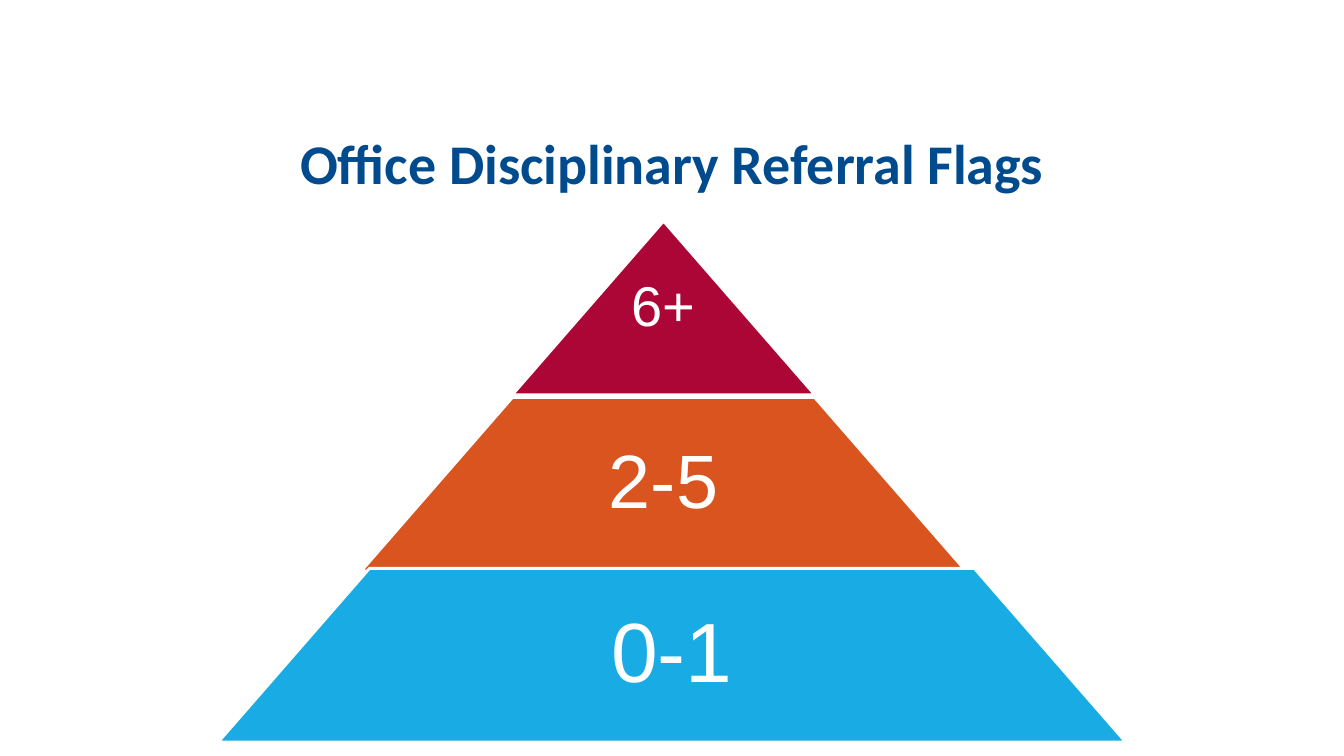
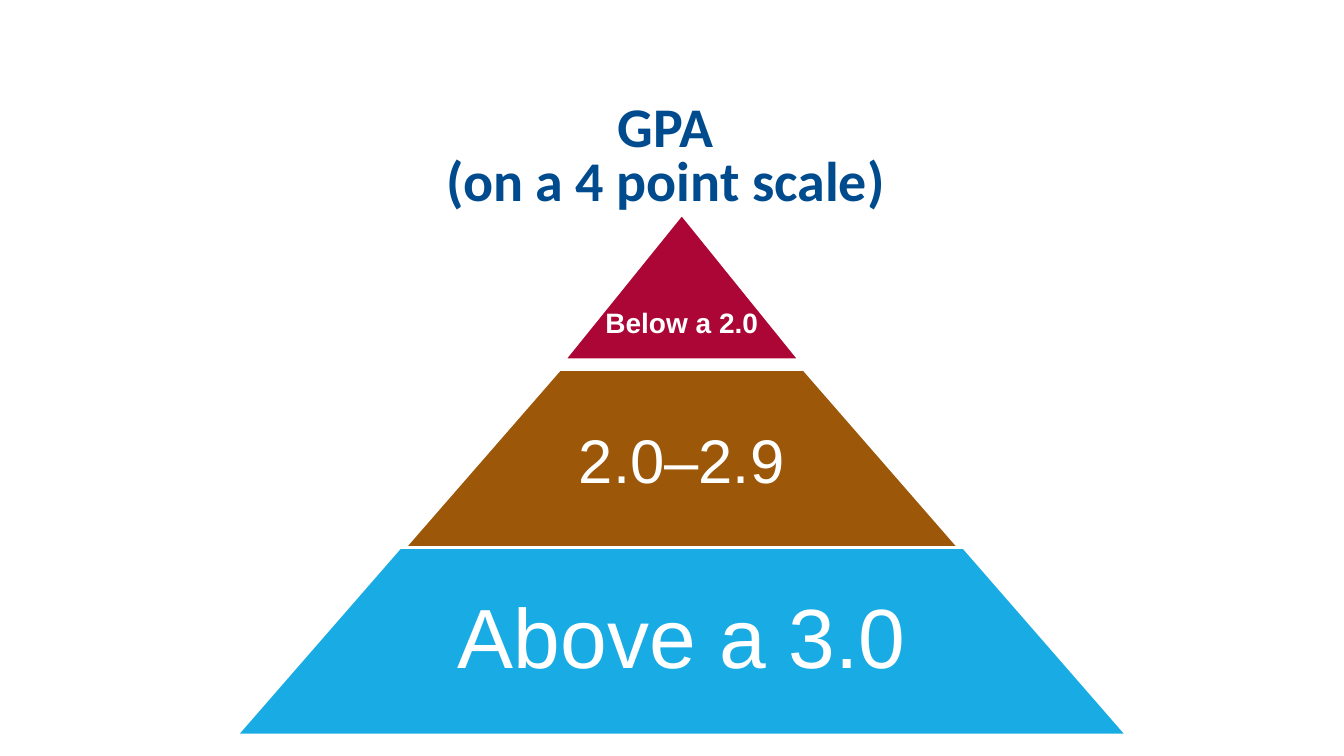
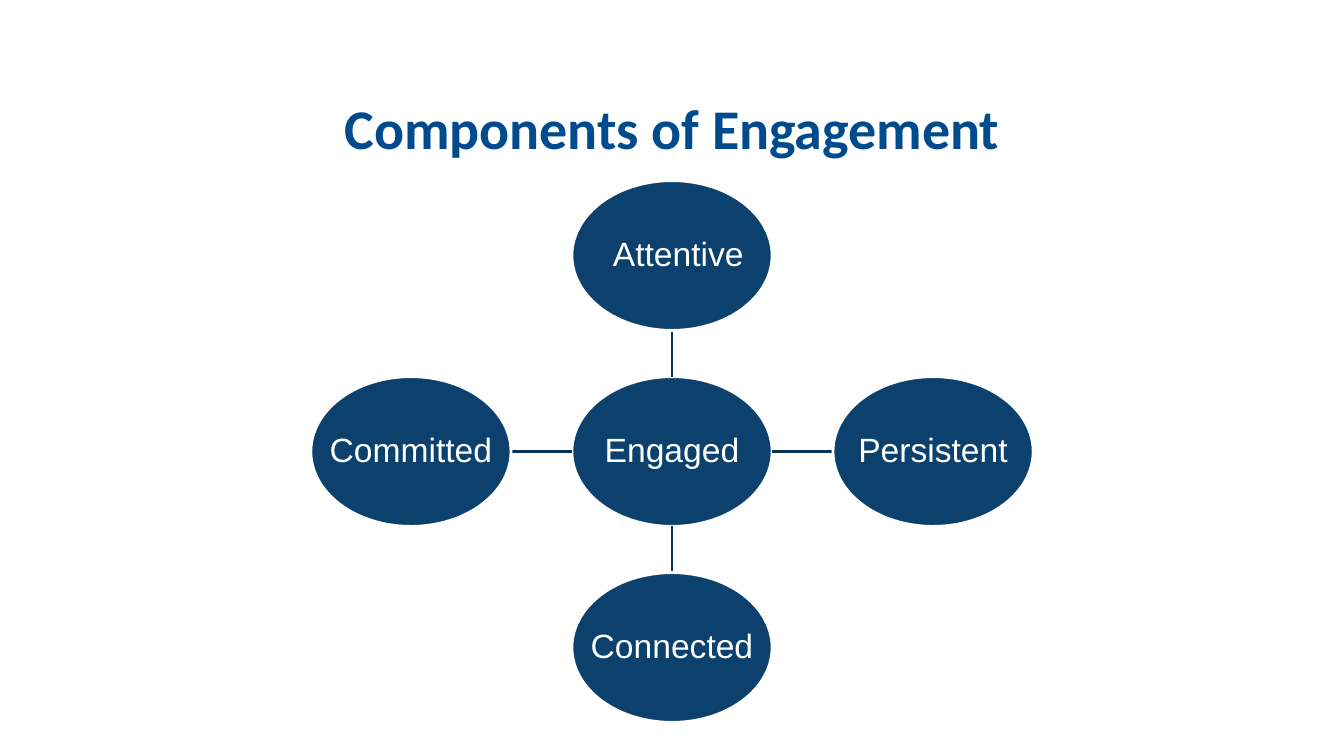
from collections import namedtuple

from lxml.etree import SubElement
from pptx import Presentation
from pptx.dml.color import RGBColor
from pptx.enum.shapes import MSO_CONNECTOR as Connector, MSO_SHAPE as Shape
from pptx.enum.text import MSO_ANCHOR as Anchor, PP_ALIGN as Align
from pptx.oxml.ns import qn
from pptx.util import Pt

BLUE, NAVY, DARK_NAVY = "004B8D", "0C416E", "073358"
RED, ORANGE, BROWN, SKY = "AB0635", "D9541E", "9C5708", "19ACE4"
WHITE = "FFFFFF"
TITLE = {"name": "Calibri", "size": Pt(40), "bold": True}
LABEL = {"name": "Arial", "bold": False}
LINE_WIDTH = 2
TIER_SLOPE = 0.871
OVAL_WIDTH, OVAL_HEIGHT = 143, 107

Box = namedtuple("Box", "left top width height")
Tier = namedtuple("Tier", "text color size width top height shift format",
                  defaults=[0, {}])


def color(hex_code):
    return RGBColor.from_string(hex_code)


def points(*lengths):
    return [Pt(round(length, 2)) for length in lengths]


def write(frame, lines, formats, hex_code, spacing, anchor=Anchor.MIDDLE,
          margins=(0, 0, 0, 0), wrap=True):
    """Fill a text frame with centred lines; margins run left, top, right, bottom."""
    frame.word_wrap = wrap
    frame.vertical_anchor = anchor
    for side, margin in zip(("left", "top", "right", "bottom"), margins):
        setattr(frame, f"margin_{side}", Pt(margin))
    for index, line in enumerate(lines):
        para = frame.add_paragraph() if index else frame.paragraphs[0]
        para.alignment = Align.CENTER
        para.line_spacing = spacing
        span = para.add_run()
        span.text = line
        for name, value in formats.items():
            setattr(span.font, name, value)
        span.font.color.rgb = color(hex_code)


def add_title(page, box, lines, spacing=0.8):
    frame = page.shapes.add_textbox(*points(*box)).text_frame
    write(frame, lines, TITLE, BLUE, spacing, margins=(7, 7, 7, 7))


def add_filled(page, preset, box, hex_code):
    """Add a preset shape with a solid fill and a white outline."""
    shape = page.shapes.add_shape(preset, *points(*box))
    shape.shadow.inherit = False
    shape.fill.solid()
    shape.fill.fore_color.rgb = color(hex_code)
    shape.line.color.rgb = color(WHITE)
    shape.line.width = Pt(LINE_WIDTH)
    return shape


def add_pyramid(page, box, tiers):
    """Stack tiers around the middle of the box; tier tops count from its top."""
    middle = box.left + box.width / 2
    for tier in tiers:
        area = Box(middle + tier.shift - tier.width / 2, box.top + tier.top,
                   tier.width, tier.height)
        shape = add_filled(page, Shape.TRAPEZOID, area, tier.color)
        shape.adjustments[0] = TIER_SLOPE
        label = page.shapes.add_textbox(*points(*area))
        settings = {"anchor": Anchor.MIDDLE, "margins": (0, 0, 0, 0), **tier.format}
        bold = settings.pop("bold", False)
        write(label.text_frame, [tier.text],
              {**LABEL, "size": Pt(tier.size), "bold": bold},
              WHITE, 0.9, **settings)


def add_oval(page, center_x, center_y, text, indent=0):
    box = Box(center_x - OVAL_WIDTH / 2, center_y - OVAL_HEIGHT / 2,
              OVAL_WIDTH, OVAL_HEIGHT)
    oval = add_filled(page, Shape.OVAL, box, NAVY)
    write(oval.text_frame, [text], {**LABEL, "size": Pt(24)}, WHITE, 0.9,
          margins=(indent, 0, 0, 0), wrap=False)


def add_spoke(page, *ends):
    spoke = page.shapes.add_connector(Connector.STRAIGHT, *points(*ends))
    spoke.line.color.rgb = color(DARK_NAVY)
    spoke.line.width = Pt(LINE_WIDTH)
    SubElement(spoke._element.spPr, qn("a:effectLst"))


def add_hub(page, box, hub, satellites):
    """Place a hub in the middle of the box and satellites at its edges."""
    hub_x, hub_y = box.left + box.width / 2, box.top + box.height / 2
    step_x, step_y = (box.width - OVAL_WIDTH) / 2, (box.height - OVAL_HEIGHT) / 2
    add_oval(page, hub_x, hub_y, hub)
    for text, way_x, way_y, indent in satellites:
        x, y = hub_x + way_x * step_x, hub_y + way_y * step_y
        edge_x, edge_y = way_x * OVAL_WIDTH / 2, way_y * OVAL_HEIGHT / 2
        add_spoke(page, hub_x + edge_x, hub_y + edge_y, x - edge_x, y - edge_y)
        add_oval(page, x, y, text, indent)


def add_referrals(page):
    add_title(page, Box(16, 78, 928, 84), ["Office Disciplinary Referral Flags"])
    add_pyramid(page, Box(156, 158, 648, 372), [
        Tier("6+", RED, 40, 216, 0, 124, -6),
        Tier("2-5", ORANGE, 54, 432, 126, 124, -6),
        Tier("0-1", SKY, 60, 648, 248, 124),
    ])


def add_grades(page):
    add_title(page, Box(16, 93, 928, 40), ["GPA ", "(on a 4 point scale) "])
    low = {"bold": True, "anchor": Anchor.BOTTOM, "margins": (2, 2, 2, 14.4)}
    add_pyramid(page, Box(169, 153, 636, 372), [
        Tier("Below a 2.0", RED, 20, 168, 0, 104, format=low),
        Tier("2.0–2.9", BROWN, 44, 408, 111, 134),
        Tier("Above a 3.0", SKY, 60, 636, 238, 134),
    ])


def add_engagement(page):
    add_title(page, Box(16, 19, 928, 143), ["Components of Engagement"], 1.0)
    add_hub(page, Box(222, 129, 516, 387), "Engaged", [
        ("Attentive", 0, -1, 9),
        ("Persistent", 1, 0, 0),
        ("Connected", 0, 1, 0),
        ("Committed", -1, 0, 0),
    ])


def main():
    deck = Presentation()
    deck.slide_width, deck.slide_height = Pt(960), Pt(540)
    for build in (add_referrals, add_grades, add_engagement):
        build(deck.slides.add_slide(deck.slide_layouts[6]))
    deck.save("out.pptx")


if __name__ == "__main__":
    main()
